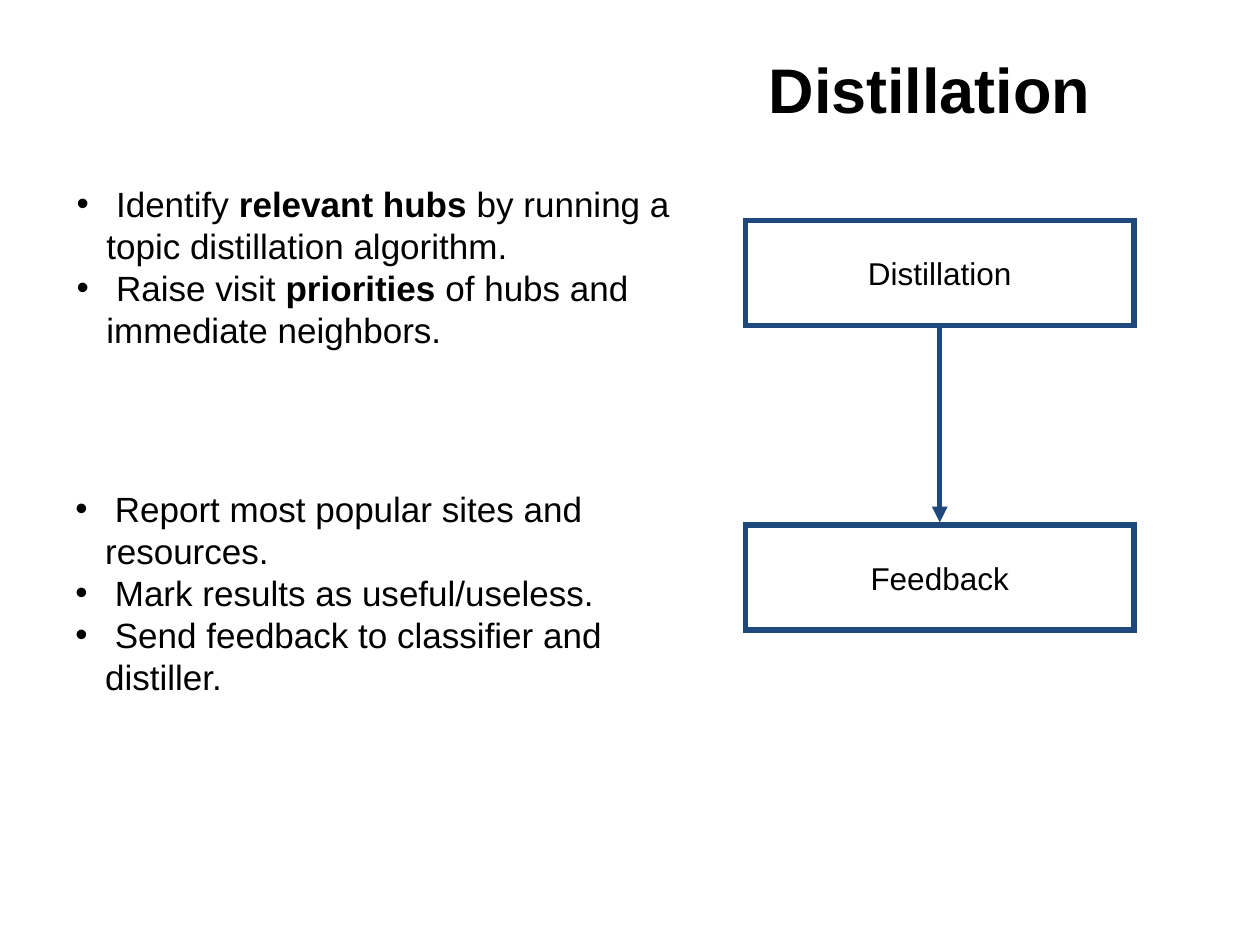
import pptx
import pptx.dml.color
import pptx.enum.shapes
import pptx.enum.text
import pptx.oxml.ns
import pptx.util
from lxml import etree

Pt = pptx.util.Pt
RGBColor = pptx.dml.color.RGBColor
Align = pptx.enum.text.PP_ALIGN
Anchor = pptx.enum.text.MSO_ANCHOR
qn = pptx.oxml.ns.qn

BLACK = RGBColor(0x00, 0x00, 0x00)
NAVY = RGBColor(0x1F, 0x49, 0x7D)
FONT = "Arial"


def write(para, text, size=20, bold=False, color=BLACK):
    span = para.add_run()
    span.text = text
    span.font.name = FONT
    span.font.size = Pt(size)
    span.font.bold = bold
    span.font.color.rgb = color


def add_bullet(para, indent=17):
    """Give the paragraph a round bullet with a hanging indent in points."""
    properties = para._p.get_or_add_pPr()
    properties.set("marL", str(Pt(indent)))
    properties.set("indent", str(-Pt(indent)))
    etree.SubElement(properties, qn("a:buFont"), typeface=FONT)
    etree.SubElement(properties, qn("a:buChar"), char="•")


class SlideBuilder:
    def __init__(self, deck, line_width=3, line_spacing=24):
        self.page = deck.slides.add_slide(deck.slide_layouts[5])
        self.line_width = line_width
        self.line_spacing = line_spacing

    def draw_line(self, shape):
        """Style the line of a shape or connector and return its XML element."""
        shape.line.color.rgb = NAVY
        shape.line.width = Pt(self.line_width)
        return shape.line._get_or_add_ln()

    def title(self, text, left, top, width, height):
        box = self.page.shapes.title
        box.left, box.top, box.width, box.height = map(Pt, (left, top, width, height))
        frame = box.text_frame
        frame.auto_size = pptx.enum.text.MSO_AUTO_SIZE.NONE
        frame.vertical_anchor = Anchor.TOP
        para = frame.paragraphs[0]
        para.alignment = Align.LEFT
        write(para, text, size=36, bold=True)

    def stage(self, text, left, top, width, height):
        box = self.page.shapes.add_shape(
            pptx.enum.shapes.MSO_SHAPE.RECTANGLE, *map(Pt, (left, top, width, height)))
        box.shadow.inherit = False
        box.fill.background()
        etree.SubElement(self.draw_line(box), qn("a:miter"), lim="800000")
        frame = box.text_frame
        frame.word_wrap = False
        frame.vertical_anchor = Anchor.MIDDLE
        para = frame.paragraphs[0]
        para.alignment = Align.CENTER
        write(para, text, size=18)

    def arrow(self, x, top, bottom):
        arrow = self.page.shapes.add_connector(
            pptx.enum.shapes.MSO_CONNECTOR.STRAIGHT, *map(Pt, (x, top, x, bottom)))
        etree.SubElement(self.draw_line(arrow), qn("a:tailEnd"), type="triangle")
        etree.SubElement(arrow._element.spPr, qn("a:effectLst"))

    def bullets(self, items, left, top, width, height):
        """Each item is a list of texts, plain and bold in turn."""
        box = self.page.shapes.add_textbox(*map(Pt, (left, top, width, height)))
        frame = box.text_frame
        frame.word_wrap = True
        for index, item in enumerate(items):
            para = frame.add_paragraph() if index else frame.paragraphs[0]
            add_bullet(para)
            para.line_spacing = Pt(self.line_spacing)
            for position, text in enumerate(item):
                write(para, text, bold=position % 2 == 1)


def main():
    deck = pptx.Presentation()
    deck.slide_width, deck.slide_height = Pt(720), Pt(540)
    slide = SlideBuilder(deck)

    slide.title("Distillation", 432, 25, 222, 50)

    left, width, height = 426, 222, 60
    distillation_top, feedback_top = 126, 300
    gap = 1.5
    slide.stage("Distillation", left, distillation_top, width, height)
    slide.stage("Feedback", left, feedback_top, width, height)
    slide.arrow(left + width / 2, distillation_top + height + gap, feedback_top - gap)

    slide.bullets([
        [" Identify ", "relevant hubs", " by running a topic distillation algorithm."],
        [" Raise visit ", "priorities", " of hubs and immediate neighbors."],
    ], 36.7, 101, 371.5, 103)
    slide.bullets([
        [" Report most popular sites and resources."],
        [" Mark results as useful/useless."],
        [" Send feedback to classifier and distiller."],
    ], 36, 275, 371.5, 127)

    deck.save("out.pptx")


if __name__ == "__main__":
    main()
